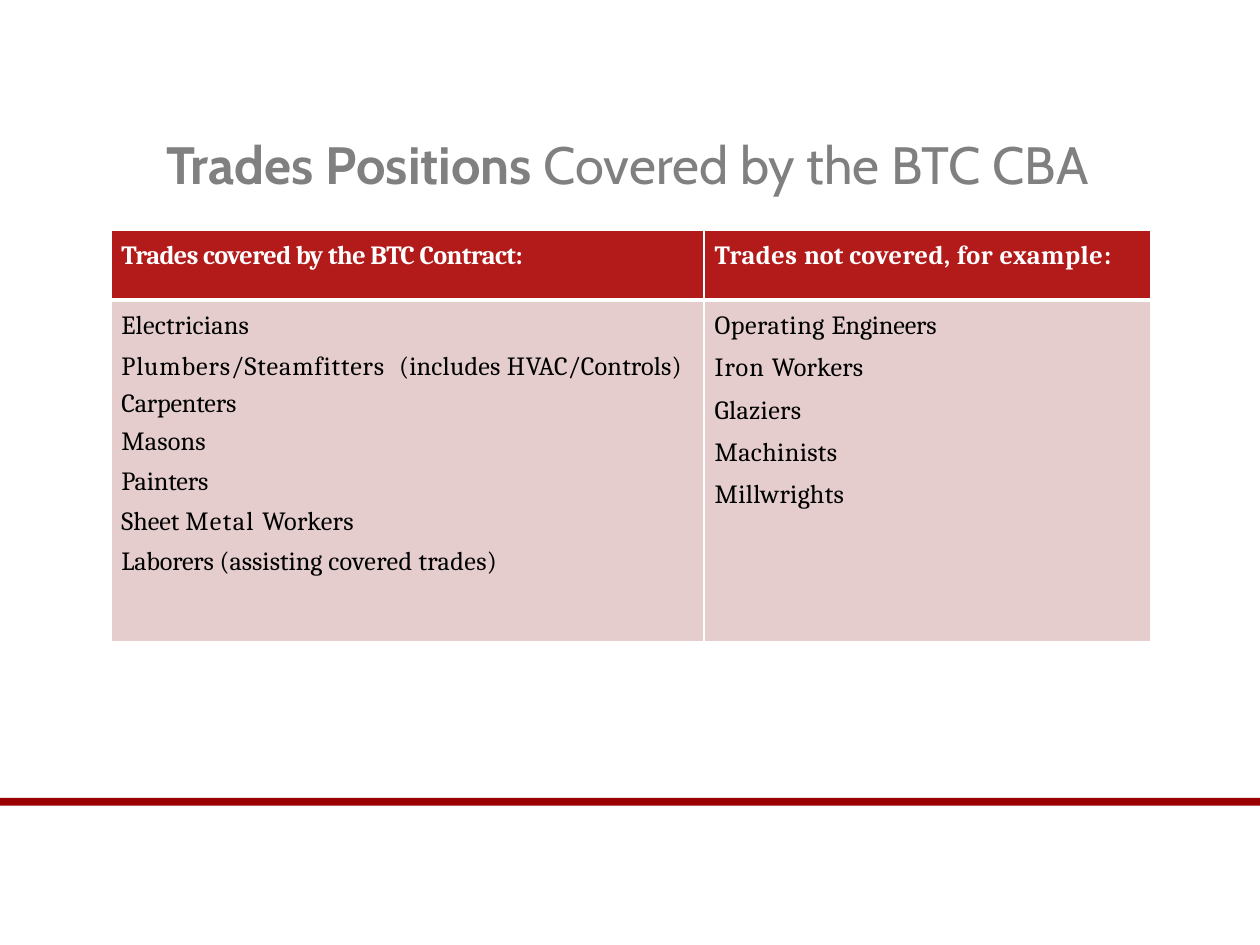
from dataclasses import dataclass

import pptx
import pptx.dml.color
import pptx.enum.shapes
import pptx.enum.text
import pptx.oxml
import pptx.oxml.ns
import pptx.util

Pt = pptx.util.Pt


@dataclass(frozen=True)
class Theme:
    title_font: str = "Cabin"
    table_font: str = "Cambria"
    title_size: float = 30
    table_size: float = 15
    title_gray: str = "808080"
    header_red: str = "B31B1B"
    body_pink: str = "E5CDCD"
    rule_red: str = "9A0000"
    white: str = "FFFFFF"
    black: str = "000000"


@dataclass(frozen=True)
class Span:
    text: str
    tracking: float = 0  # points between letters


@dataclass(frozen=True)
class Line:
    spans: tuple[Span, ...]
    leading: float | pptx.util.Length = 1.0
    before: float = 0


THEME = Theme()
EXACT = Pt(20.4)

# Content
HEADERS = (
    (Line((Span("Trades covered by the BTC Contract:", -0.3),), EXACT),),
    (Line((Span("Trades ", 0.3), Span("not "), Span("covered, for example", 0.3),
           Span(":", 0.4)), EXACT),),
)
COVERED = (
    Line((Span("Electricians", 0.1),), EXACT),
    Line((Span("Plumbers/Steamfitters  ", 0.5), Span("(includes ", 0.1),
          Span("H", 0.5), Span("VAC/Controls)", 0.1)), 1.03, 5.4),
    Line((Span("Carpenters", -0.1),), 1.25),
    Line((Span("Masons", 0.1),), 1.25),
    Line((Span("Painters", -0.1),), before=5.7),
    Line((Span("Sheet "), Span("Metal ", 0.8), Span("Workers", 0.1)), before=5.3),
    Line((Span("Laborers ", -0.1), Span("(assisting "),
          Span("covered trades)", 0.2)), 1.01, 5.5),
)
NOT_COVERED = (
    Line((Span("Operating ", 0.3), Span("Engineers", -0.1)), EXACT),
    Line((Span("Iron ", 0.6), Span("Workers", 0.1)), 1.37, 0.5),
    *(Line((Span(trade, 0.2),), 1.37, 0.5)
      for trade in ("Glaziers", "Machinists", "Millwrights")),
)


def rgb(color: str) -> pptx.dml.color.RGBColor:
    return pptx.dml.color.RGBColor.from_string(color)


def style_font(font, name: str, size: float, color: str, bold: bool) -> None:
    font.name, font.size, font.bold = name, Pt(size), bold
    font.color.rgb = rgb(color)


def draw_borders(cell, color: str, bottom_width: float) -> None:
    properties = cell._tc.get_or_add_tcPr()
    widths = {"lnL": 1, "lnR": 1, "lnT": 1, "lnB": bottom_width}
    for position, (side, width) in enumerate(widths.items()):
        border = pptx.oxml.parse_xml(
            f'<a:{side} {pptx.oxml.ns.nsdecls("a")} w="{Pt(width)}">'
            f'<a:solidFill><a:srgbClr val="{color}"/></a:solidFill></a:{side}>')
        properties.insert(position, border)


def fill_cell(cell, lines: tuple[Line, ...], fill: str, color: str,
              bold: bool, bottom_width: float) -> None:
    cell.fill.solid()
    cell.fill.fore_color.rgb = rgb(fill)
    cell.margin_left, cell.margin_right = Pt(6), Pt(5)
    cell.margin_top = cell.margin_bottom = Pt(3)
    draw_borders(cell, THEME.white, bottom_width)
    for index, line in enumerate(lines):
        frame = cell.text_frame
        paragraph = frame.add_paragraph() if index else frame.paragraphs[0]
        paragraph.line_spacing = line.leading
        paragraph.space_before = Pt(line.before)
        for span in line.spans:
            run = paragraph.add_run()
            run.text = span.text
            style_font(run.font, THEME.table_font, THEME.table_size, color, bold)
            run._r.get_or_add_rPr().set("spc", str(round(span.tracking * 100)))


def draw_title(slide) -> None:
    title = slide.shapes.add_textbox(Pt(32.4), Pt(66.2), Pt(652.3), Pt(54))
    frame = title.text_frame
    frame.word_wrap = True
    frame.vertical_anchor = pptx.enum.text.MSO_ANCHOR.MIDDLE
    heading = frame.paragraphs[0]
    heading.alignment = pptx.enum.text.PP_ALIGN.CENTER
    for words, bold in (("Trades Positions ", True),
                        ("Covered by the BTC CBA", False)):
        run = heading.add_run()
        run.text = words
        style_font(run.font, THEME.title_font, THEME.title_size,
                   THEME.title_gray, bold)


def draw_trades_table(slide) -> None:
    column_widths, row_heights = (339, 255), (40, 195)
    trades = slide.shapes.add_table(
        2, 2, Pt(63.4), Pt(131.5),
        Pt(sum(column_widths)), Pt(sum(row_heights))).table
    for column, width in zip(trades.columns, column_widths):
        column.width = Pt(width)
    for row, height in zip(trades.rows, row_heights):
        row.height = Pt(height)
    for index, header in enumerate(HEADERS):
        fill_cell(trades.cell(0, index), header, THEME.header_red,
                  THEME.white, True, 3)
    for index, positions in enumerate((COVERED, NOT_COVERED)):
        fill_cell(trades.cell(1, index), positions, THEME.body_pink,
                  THEME.black, False, 1)
        # Both rows share the thick rule between header and body
        top = trades.cell(1, index)._tc.tcPr.find(pptx.oxml.ns.qn("a:lnT"))
        top.set("w", str(Pt(3)))


def draw_footer_rule(slide) -> None:
    rule = slide.shapes.add_shape(pptx.enum.shapes.MSO_SHAPE.RECTANGLE,
                                  Pt(0), Pt(455.9), Pt(720), Pt(4.5))
    rule.shadow.inherit = False
    rule.fill.solid()
    rule.fill.fore_color.rgb = rgb(THEME.rule_red)
    rule.line.fill.background()


def main() -> None:
    deck = pptx.Presentation()
    deck.slide_width, deck.slide_height = Pt(720), Pt(540)
    slide = deck.slides.add_slide(deck.slide_layouts[6])
    draw_title(slide)
    draw_trades_table(slide)
    draw_footer_rule(slide)
    deck.save("out.pptx")


if __name__ == "__main__":
    main()
